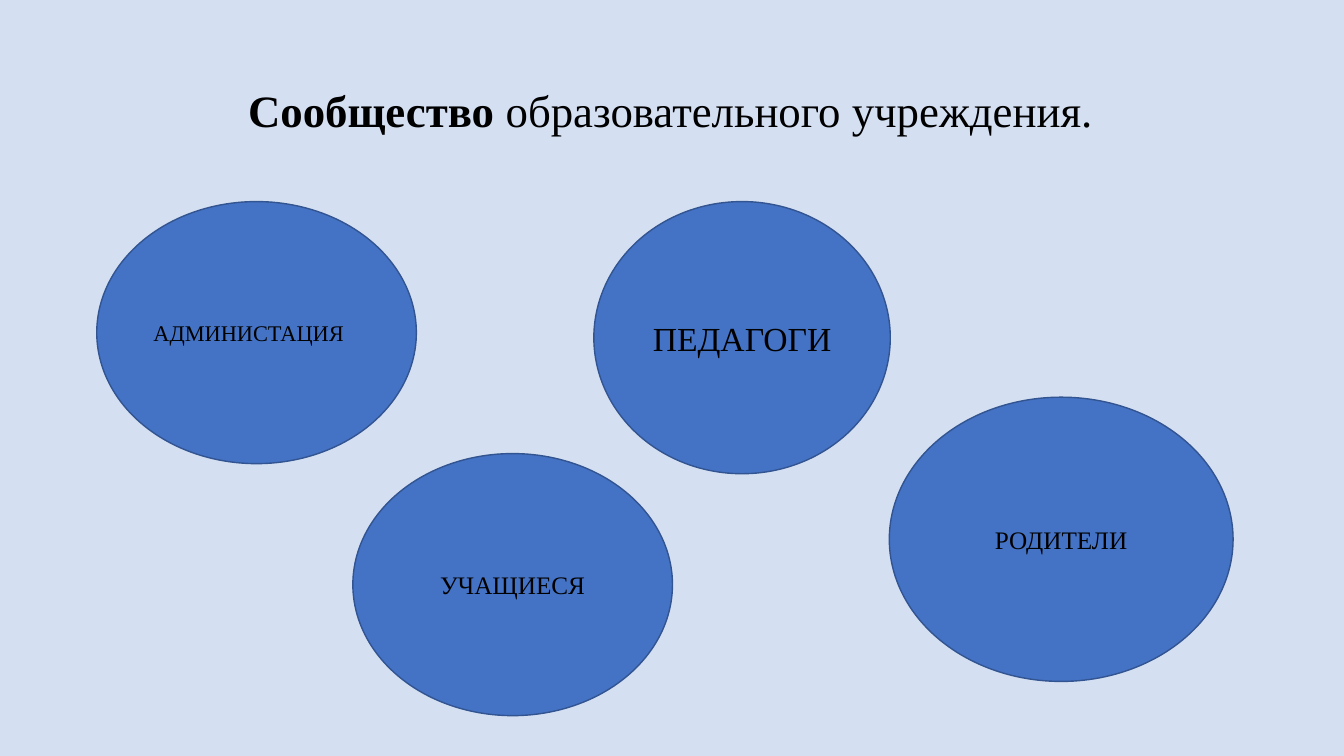
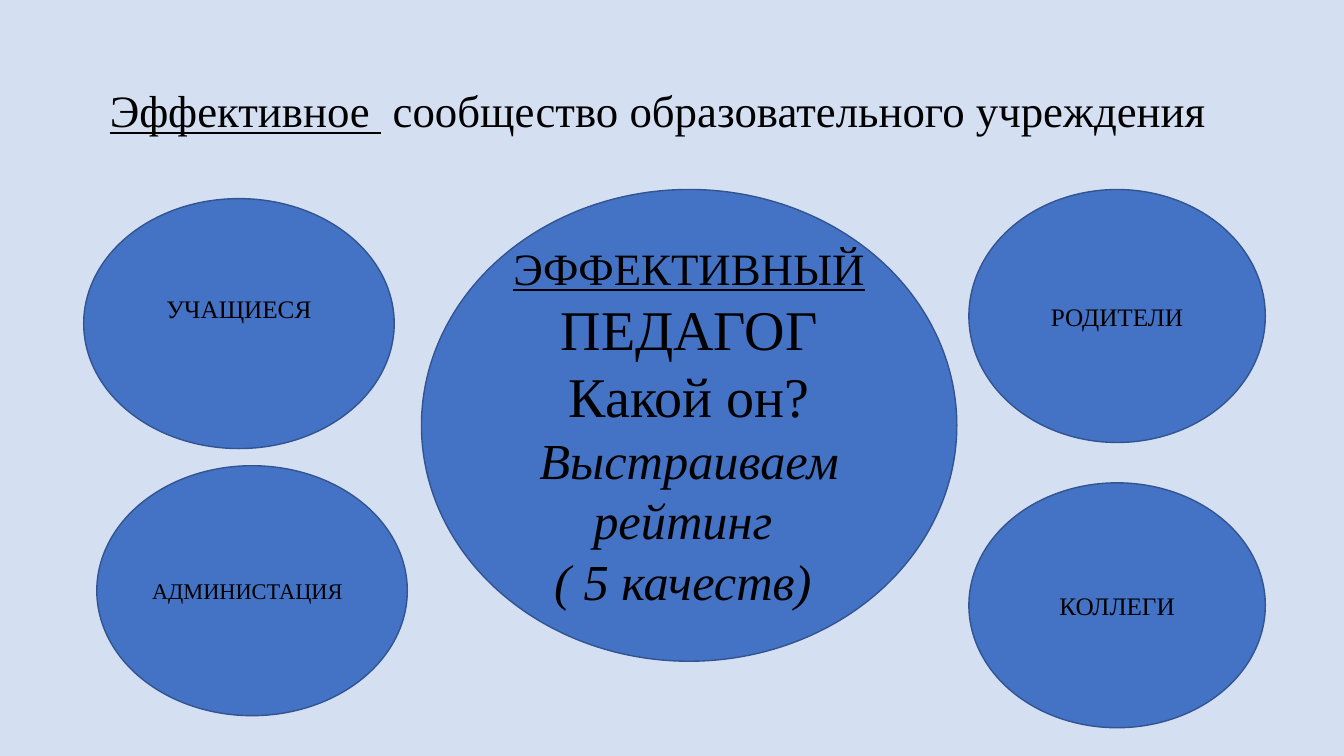
from pptx import Presentation
from pptx.dml.color import RGBColor
from pptx.enum.shapes import MSO_SHAPE as Shape
from pptx.enum.text import MSO_ANCHOR as Anchor, PP_ALIGN as Align
from pptx.util import Inches, Pt

# Shared look
FONT = "Times New Roman"
BACKGROUND, TEXT = "D4DFF2", "000000"
CIRCLE_FILL, CIRCLE_LINE = "4472C4", "325491"
TITLE_TOP, TITLE_HEIGHT, TITLE_SIZE = 0.4, 1.45, 32
INSET = 0.1


def color(hex_string):
    return RGBColor.from_string(hex_string)


def add_run(paragraph, text, size=18, bold=False, italic=False, underline=False):
    run = paragraph.add_run()
    run.text = text
    font = run.font
    font.name, font.size = FONT, Pt(size)
    font.bold, font.italic, font.underline = bold, italic, underline
    font.color.rgb = color(TEXT)


def write(frame, paragraphs, align=Align.CENTER, line_spacing=None):
    """Each paragraph is a list of (text, format) runs."""
    frame.word_wrap = True
    frame.vertical_anchor = Anchor.MIDDLE
    for number, runs in enumerate(paragraphs):
        paragraph = frame.add_paragraph() if number else frame.paragraphs[0]
        paragraph.alignment = align
        paragraph.line_spacing = line_spacing
        for text, style in runs:
            add_run(paragraph, text, **style)


def add_title(slide, left, width, indent, runs):
    box = slide.shapes.add_textbox(
        Inches(left), Inches(TITLE_TOP), Inches(width), Inches(TITLE_HEIGHT))
    box.text_frame.margin_left = Inches(INSET + indent)
    styled = [(text, {"size": TITLE_SIZE, **style}) for text, style in runs]
    write(box.text_frame, [styled], align=Align.LEFT, line_spacing=0.9)


def add_circle(slide, left, top, width, height, paragraphs, align=Align.CENTER):
    circle = slide.shapes.add_shape(
        Shape.OVAL, Inches(left), Inches(top), Inches(width), Inches(height))
    circle.shadow.inherit = False
    circle.fill.solid()
    circle.fill.fore_color.rgb = color(CIRCLE_FILL)
    circle.line.color.rgb = color(CIRCLE_LINE)
    circle.line.width = Pt(1)
    write(circle.text_frame, paragraphs, align=align)
    return circle


def add_group(slide, left, top, width, height, name, size=18, align=Align.CENTER):
    return add_circle(slide, left, top, width, height, [[(name, {"size": size})]], align)


def add_administration(slide, left, top, width, height):
    add_group(slide, left, top, width, height, "АДМИНИСТАЦИЯ", size=16, align=Align.LEFT)


def build_community(slide):
    add_title(slide, 0.92, 11.5, 1.44, [
        ("Сообщество ", {"bold": True}),
        ("образовательного учреждения.", {}),
    ])
    add_group(slide, 5.89, 2, 2.94, 2.7, "ПЕДАГОГИ", size=24)
    add_group(slide, 3.5, 4.5, 3.17, 2.6, "УЧАЩИЕСЯ")
    add_administration(slide, 0.96, 2, 3.17, 2.6)
    add_group(slide, 8.82, 3.94, 3.41, 2.82, "РОДИТЕЛИ")


def build_effective_community(slide):
    add_title(slide, 0.55, 11.86, 0.44, [
        ("Эффективное ", {"underline": True}),
        (" сообщество образовательного учреждения", {}),
    ])

    # Central question
    large = {"size": 40}
    task = {"size": 36, "italic": True}
    add_circle(slide, 4.18, 1.88, 5.31, 4.68, [
        [("ЭФФЕКТИВНЫЙ ", {"size": 32, "underline": True}), ("ПЕДАГОГ", large)],
        [("Какой он?", large)],
        [("Выстраиваем рейтинг ", task)],
        [("( 5 качеств) ", task)],
    ])

    # Surrounding groups
    pupils = add_group(slide, 0.83, 1.97, 3.08, 2.48, "УЧАЩИЕСЯ")
    pupils.text_frame.margin_bottom = Inches(0.34)  # lifts the label
    add_administration(slide, 0.96, 4.62, 3.08, 2.48)
    add_group(slide, 9.61, 4.79, 2.94, 2.43, "КОЛЛЕГИ")
    add_group(slide, 9.61, 1.88, 2.94, 2.51, "РОДИТЕЛИ")


def main():
    prs = Presentation()
    prs.slide_width, prs.slide_height = Inches(13.33), Inches(7.5)
    backdrop = prs.slide_master.background.fill
    backdrop.solid()
    backdrop.fore_color.rgb = color(BACKGROUND)

    blank = prs.slide_layouts[6]
    for build in (build_community, build_effective_community):
        build(prs.slides.add_slide(blank))
    prs.save("out.pptx")


if __name__ == "__main__":
    main()
